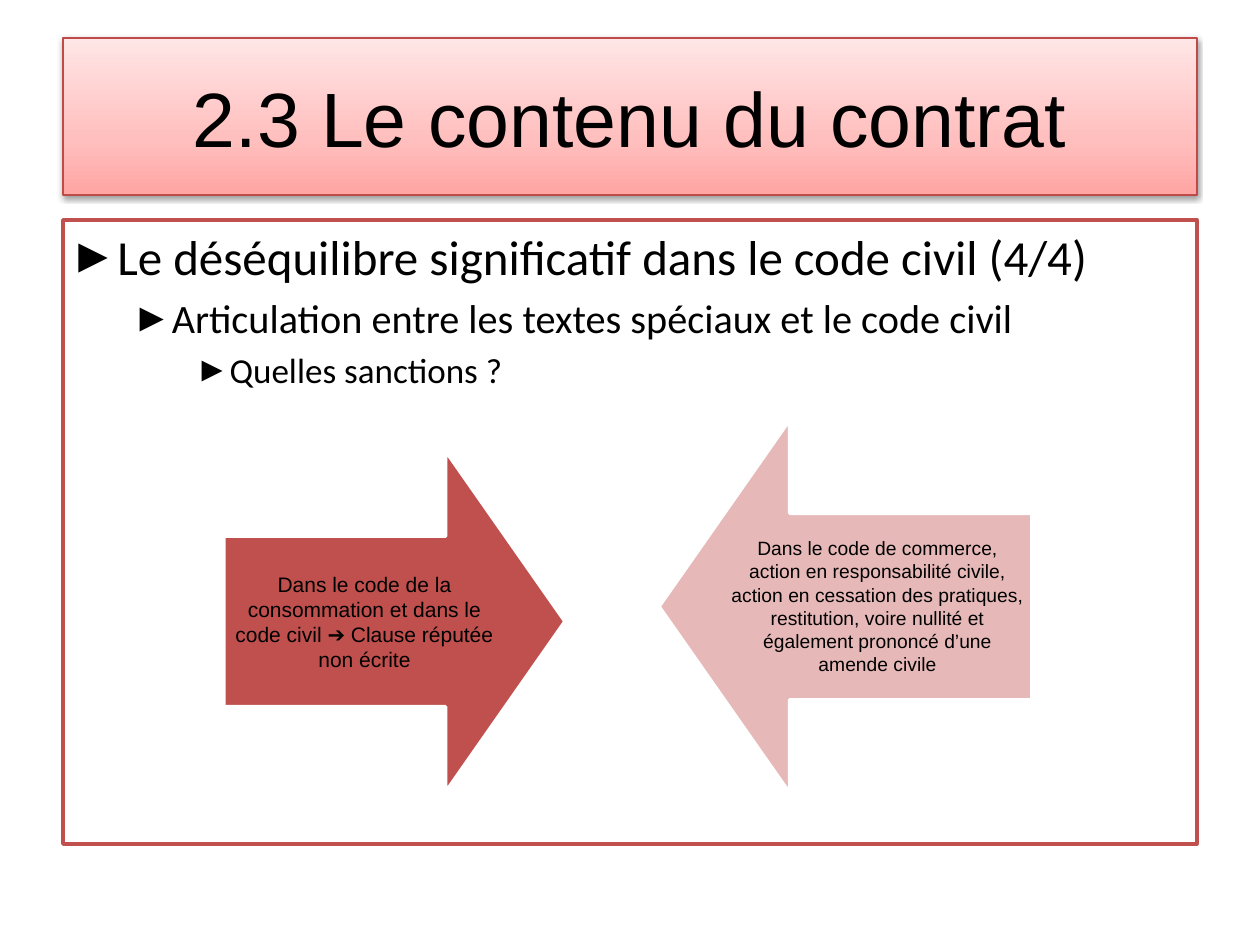
from copy import deepcopy

from lxml.etree import SubElement
from pptx import Presentation
from pptx.dml.color import RGBColor
from pptx.enum.shapes import MSO_SHAPE
from pptx.enum.text import MSO_ANCHOR, PP_ALIGN
from pptx.oxml.ns import qn
from pptx.util import Pt

SCALE = 914400 / 126


def px(*lengths):
    return [round(length * SCALE) for length in lengths]


def color(value):
    return RGBColor.from_string(value)


presentation = Presentation()
presentation.slide_width, presentation.slide_height = px(1260, 945)
slide = presentation.slides.add_slide(presentation.slide_layouts[6])

inset = px(6)[0]
frame_format = {
    "word_wrap": True,
    "margin_left": inset,
    "margin_right": inset,
    "margin_top": inset,
    "margin_bottom": inset,
}

panels = []
for top, height, line_color, line_width, anchor in [
    (38, 157, "BE4B48", 0.75, MSO_ANCHOR.MIDDLE),
    (220, 624, "C0504D", 2, MSO_ANCHOR.TOP),
]:
    shape = slide.shapes.add_shape(MSO_SHAPE.RECTANGLE, *px(63, top, 1134, height))
    shape.fill.solid()
    shape.fill.fore_color.rgb = color("FFFFFF")
    shape.line.color.rgb = color(line_color)
    shape.line.width = Pt(line_width)
    shape.shadow.inherit = False
    for name, value in {**frame_format, "vertical_anchor": anchor}.items():
        setattr(shape.text_frame, name, value)
    panels.append(shape)
title, body = panels

title.fill.gradient()
title.fill.gradient_angle = 90
stop_list = next(title._element.iter(qn("a:gsLst")))
stop_list.append(deepcopy(stop_list[-1]))
stop_values = [(0, "FFA5A3"), (0.35, "FFBFBE"), (1, "FFE6E6")]
for stop, (position, value) in zip(title.fill.gradient_stops, stop_values):
    stop.position = position
    stop.color.rgb = color(value)

effects = next(title._element.iter(qn("a:effectLst")))
shadow = SubElement(effects, qn("a:outerShdw"), blurRad=str(Pt(3)),
                    dist=str(Pt(1.6)), dir="5400000", rotWithShape="0")
shadow_color = SubElement(shadow, qn("a:srgbClr"), val="000000")
SubElement(shadow_color, qn("a:alpha"), val="38000")

paragraph = title.text_frame.paragraphs[0]
paragraph.text = "2.3 Le contenu du contrat"
paragraph.alignment = PP_ALIGN.CENTER
for name, value in {"size": Pt(44), "name": "Arial"}.items():
    setattr(paragraph.font, name, value)
paragraph.font.color.rgb = color("000000")

outline = [
    ("Le déséquilibre significatif dans le code civil (4/4)", 28, 6, 47, 47),
    ("Articulation entre les textes spéciaux et le code civil", 23, 5, 102, 39),
    ("Quelles sanctions ?", 20, 4, 158, 32),
]
for level, (text, size, space, margin, hanging) in enumerate(outline):
    frame = body.text_frame
    paragraph = frame.add_paragraph() if level else frame.paragraphs[0]
    paragraph.text = text
    for name, value in {"level": level, "alignment": PP_ALIGN.LEFT,
                        "space_before": Pt(space)}.items():
        setattr(paragraph, name, value)
    for name, value in {"size": Pt(size), "name": "Calibri"}.items():
        setattr(paragraph.font, name, value)
    paragraph.font.color.rgb = color("000000")
    properties = paragraph._p.get_or_add_pPr()
    left, indent = px(margin, -hanging)
    properties.set("marL", str(left))
    properties.set("indent", str(indent))
    SubElement(properties, qn("a:buFont"), typeface="Arial")
    SubElement(properties, qn("a:buChar"), char="►")

arrows = [
    ((224, 451, 341, 341), 0, "C0504D", (224, 564, 281, 115), 12,
     "Dans le code de la consommation et dans le code civil ➔ Clause réputée non écrite"),
    ((659, 420, 373, 373), 180, "E6B9B8", (724, 524, 307, 164), 11,
     "Dans le code de commerce, action en responsabilité civile, action en cessation "
     "des pratiques, restitution, voire nullité et également prononcé d’une amende civile"),
]
for arrow_box, rotation, fill_color, text_box, size, text in arrows:
    arrow = slide.shapes.add_shape(MSO_SHAPE.RIGHT_ARROW, *px(*arrow_box))
    arrow.adjustments[0] = 0.5
    arrow.adjustments[1] = 0.35
    arrow.rotation = rotation
    arrow.fill.solid()
    arrow.fill.fore_color.rgb = color(fill_color)
    arrow.line.color.rgb = color("FFFFFF")
    arrow.line.width = Pt(2)
    arrow.shadow.inherit = False

    label = slide.shapes.add_textbox(*px(*text_box))
    for name, value in {**frame_format, "vertical_anchor": MSO_ANCHOR.MIDDLE}.items():
        setattr(label.text_frame, name, value)
    paragraph = label.text_frame.paragraphs[0]
    paragraph.text = text
    paragraph.alignment = PP_ALIGN.CENTER
    for name, value in {"size": Pt(size), "name": "Arial"}.items():
        setattr(paragraph.font, name, value)
    paragraph.font.color.rgb = color("000000")

presentation.save("out.pptx")
